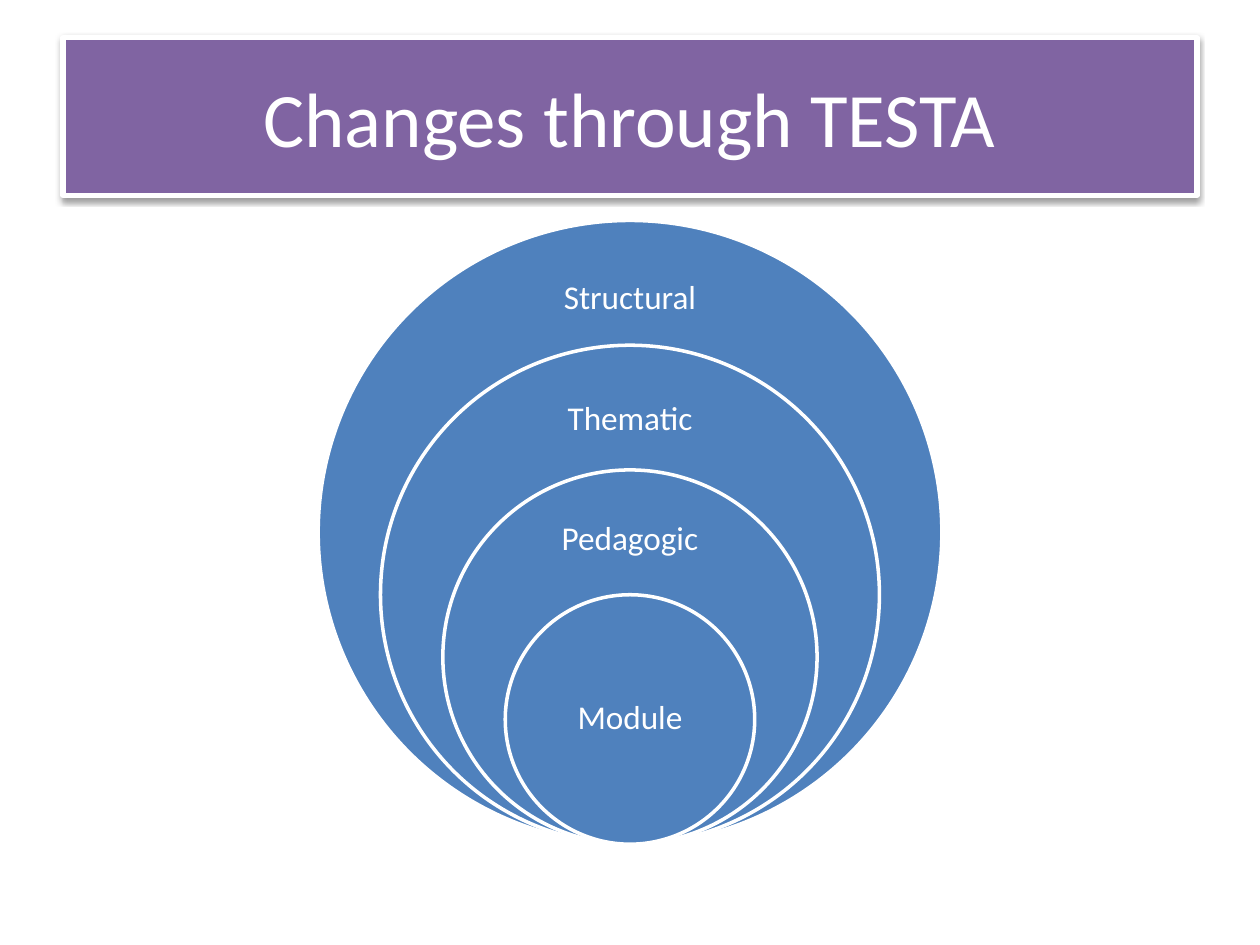
from pptx import Presentation
from pptx.dml.color import RGBColor
from pptx.enum.shapes import MSO_SHAPE
from pptx.enum.text import MSO_ANCHOR, PP_ALIGN
from pptx.oxml import parse_xml
from pptx.oxml.ns import nsdecls
from pptx.util import Inches, Pt

PURPLE = RGBColor(0x80, 0x64, 0xA2)
BLUE = RGBColor(0x4F, 0x81, 0xBD)
WHITE = RGBColor(0xFF, 0xFF, 0xFF)

SHADOW = (
    f'<a:effectLst {nsdecls("a")}>'
    '<a:outerShdw blurRad="39370" dist="20320" dir="5400000" rotWithShape="0">'
    '<a:srgbClr val="000000"><a:alpha val="38000"/></a:srgbClr>'
    '</a:outerShdw></a:effectLst>'
)


def write_text(frame, text, *, size, font="Calibri", color=WHITE,
               spacing=1.0, side_inset=0.1, end_inset=0.05):
    frame.word_wrap = True
    frame.vertical_anchor = MSO_ANCHOR.MIDDLE
    frame.margin_left = frame.margin_right = Inches(side_inset)
    frame.margin_top = frame.margin_bottom = Inches(end_inset)
    paragraph = frame.paragraphs[0]
    paragraph.alignment = PP_ALIGN.CENTER
    paragraph.line_spacing = spacing
    run = paragraph.add_run()
    run.text = text
    run.font.name = font
    run.font.size = Pt(size)
    run.font.color.rgb = color


class SlideBuilder:
    label_size = 19
    title_size = 44

    def __init__(self, slide):
        self.slide = slide

    def filled_shape(self, preset, left, top, width, height, fill, line_width):
        shape = self.slide.shapes.add_shape(
            preset, Inches(left), Inches(top), Inches(width), Inches(height))
        shape.shadow.inherit = False
        shape.fill.solid()
        shape.fill.fore_color.rgb = fill
        shape.line.color.rgb = WHITE
        shape.line.width = Pt(line_width)
        return shape

    def title_banner(self, text, left, top, width, height):
        banner = self.filled_shape(
            MSO_SHAPE.RECTANGLE, left, top, width, height, PURPLE, 3)
        properties = banner._element.spPr
        properties.replace(properties.find("{*}effectLst"), parse_xml(SHADOW))
        write_text(banner.text_frame, text, size=self.title_size)

    def circle(self, center, bottom, diameter):
        self.filled_shape(MSO_SHAPE.OVAL, center - diameter / 2,
                          bottom - diameter, diameter, diameter, BLUE, 2)

    def label(self, text, center, top, width, height):
        box = self.slide.shapes.add_textbox(
            Inches(center - width / 2), Inches(top), Inches(width), Inches(height))
        write_text(box.text_frame, text, size=self.label_size,
                   spacing=0.9, side_inset=0.1, end_inset=0.15)


def main():
    deck = Presentation()
    deck.slide_width, deck.slide_height = Inches(10), Inches(7.5)
    builder = SlideBuilder(deck.slides.add_slide(deck.slide_layouts[6]))
    builder.title_banner("Changes through TESTA", 0.5, 0.3, 9, 1.25)

    center, bottom, step = 5, 6.7, 0.99
    levels = [
        ("Structural", 2, 1.38, 0.74),
        ("Thematic", 2.98, 1.38, 0.71),
        ("Pedagogic", 3.95, 1.38, 0.67),
        ("Module", 5.21, 1.4, 0.99),
    ]
    for index, (name, top, width, height) in enumerate(levels):
        builder.circle(center, bottom, step * (5 - index))
        builder.label(name, center, top, width, height)

    deck.save("out.pptx")


if __name__ == "__main__":
    main()
